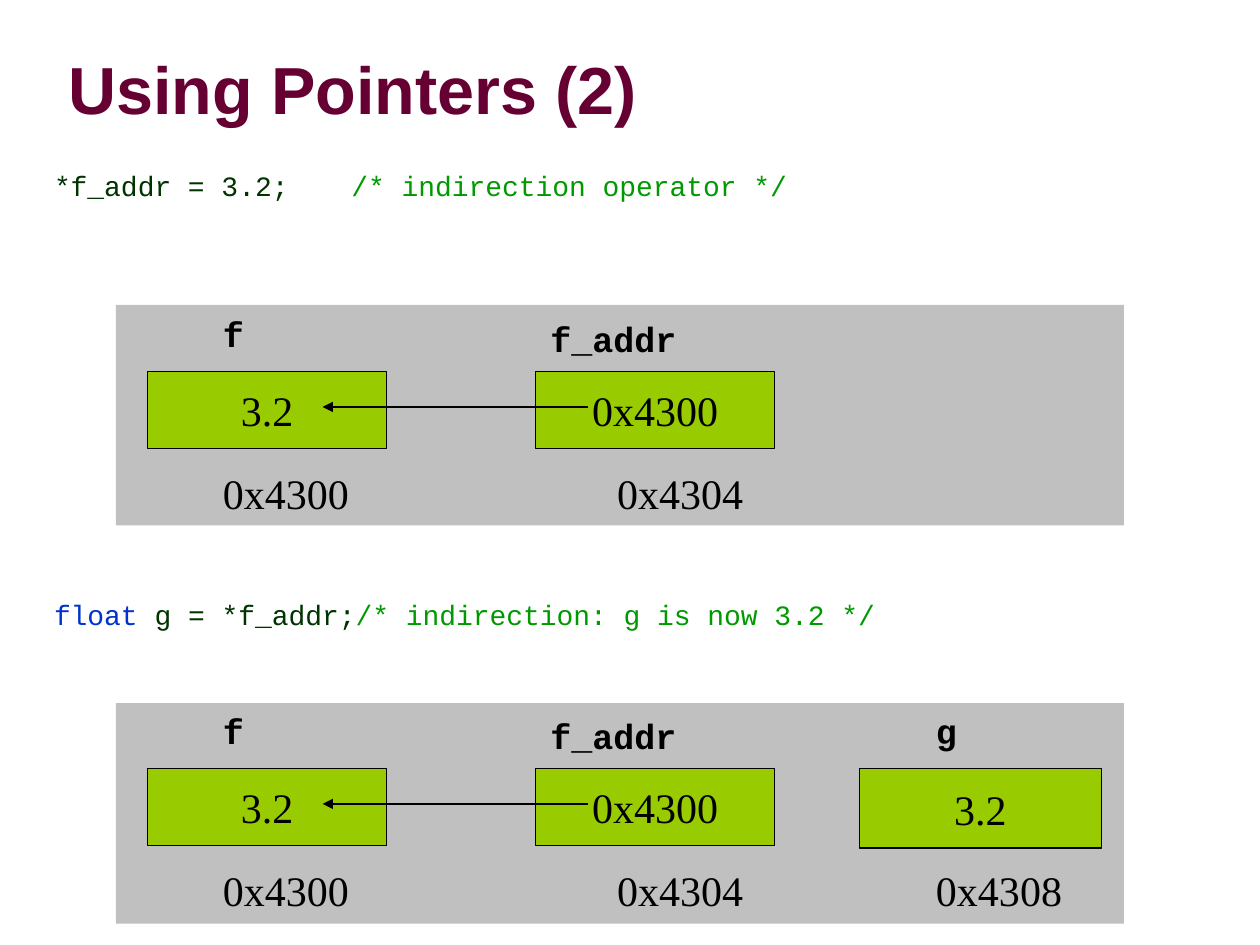
"""Build the slide "Using Pointers (2)" with two memory diagrams."""
from lxml import etree
from pptx import Presentation
from pptx.dml.color import RGBColor
from pptx.enum.shapes import MSO_CONNECTOR, MSO_SHAPE
from pptx.enum.text import MSO_ANCHOR, MSO_AUTO_SIZE, PP_ALIGN
from pptx.oxml.ns import qn
from pptx.util import Inches, Pt

RECTANGLE = MSO_SHAPE.RECTANGLE
STRAIGHT = MSO_CONNECTOR.STRAIGHT
MIDDLE, TOP = MSO_ANCHOR.MIDDLE, MSO_ANCHOR.TOP
GROW, FIXED = MSO_AUTO_SIZE.SHAPE_TO_FIT_TEXT, MSO_AUTO_SIZE.NONE
LEFT, CENTER = PP_ALIGN.LEFT, PP_ALIGN.CENTER

BLACK, GREY, LIME = "000000", "C0C0C0", "99CC00"
CODE, COMMENT, KEYWORD = "003300", "009900", "0033CC"
MONO, SERIF = "Courier New", "Times New Roman"

TITLE = "Using Pointers (2)"
CODE_LINES = [
    (5, [("*f_addr = 3.2;\t", CODE), ("/* indirection operator */", COMMENT)]),
    (229.5, [("float", KEYWORD), (" g = *f_addr;", CODE),
             ("/* indirection: g is now 3.2 */", COMMENT)]),
]
F = {"name": ("f", 1.67, 0, 0.36), "cell": ("3.2", 1.17, 1.9, 0.61),
     "address": ("0x4300", 1.67)}
F_ADDR = {"name": ("f_addr", 4.27, 0.04, 1.2), "cell": ("0x4300", 4.25, 1.9, 0.61),
          "address": ("0x4304", 4.8)}
G = {"name": ("g", 7.33, 0, 0.36), "cell": ("3.2", 6.82, 1.92, 0.63),
     "address": ("0x4308", 7.33)}
DIAGRAMS = [(2.42, 2.43, [F, F_ADDR]), (5.58, 5.58, [F, F_ADDR, G])]


def color(hex_text):
    return RGBColor.from_string(hex_text)


def add_span(para, text, font=SERIF, size=24, ink=BLACK, bold=False):
    span = para.add_run()
    span.text = text
    span.font.name, span.font.size, span.font.bold = font, Pt(size), bold
    span.font.color.rgb = color(ink)


def write(shape, text, align=LEFT, anchor=TOP, wrap=False, fit=GROW, **style):
    frame = shape.text_frame
    frame.word_wrap, frame.auto_size, frame.vertical_anchor = wrap, fit, anchor
    para = frame.paragraphs[0]
    para.alignment = align
    add_span(para, text, **style)


def add_label(page, text, left, top, width, height, **style):
    box = page.shapes.add_textbox(*map(Inches, (left, top, width, height)))
    write(box, text, **style)


def add_block(page, left, top, width, height, fill, outline=None):
    block = page.shapes.add_shape(RECTANGLE, *map(Inches, (left, top, width, height)))
    block.shadow.inherit = False
    block.fill.solid()
    block.fill.fore_color.rgb = color(fill)
    if outline:
        block.line.color.rgb = color(outline)
        block.line.width = Pt(0.75)
    else:
        block.line.fill.background()
    return block


def add_arrow(page, start, end, y):
    arrow = page.shapes.add_connector(STRAIGHT, *map(Inches, (start, y, end, y)))
    arrow.line.color.rgb = color(BLACK)
    arrow.line.width = Pt(0.75)
    etree.SubElement(arrow.line._get_or_add_ln(), qn("a:tailEnd"), type="triangle")
    etree.SubElement(arrow._element.spPr, qn("a:effectLst"))


def add_code(page):
    box = page.shapes.add_textbox(*map(Inches, (0.32, 1.34, 9.09, 5.72)))
    frame = box.text_frame
    frame.word_wrap = True
    for index, (gap, spans) in enumerate(CODE_LINES):
        para = frame.add_paragraph() if index else frame.paragraphs[0]
        para.line_spacing, para.space_before = 0.8, Pt(gap)
        indents = {"marL": 0.37, "indent": -0.36, "defTabSz": 1}
        for key, value in indents.items():
            para._p.get_or_add_pPr().set(key, str(Inches(value)))
        for text, ink in spans:
            add_span(para, text, font=MONO, size=16, ink=ink)


def add_diagram(page, panel_top, top, variables):
    add_block(page, 0.92, panel_top, 8, 1.75, GREY)
    for variable in variables:
        name, left, drop, width = variable["name"]
        add_label(page, name, left, top + drop, width, 0.43,
                  font=MONO, size=20, bold=True)
        address, left = variable["address"]
        add_label(page, address, left, top + 1.23, 1.21, 0.51)
        value, left, width, height = variable["cell"]
        cell = add_block(page, left, top + 0.52, width, height, LIME, BLACK)
        write(cell, value, align=CENTER, anchor=MIDDLE, fit=FIXED)
    add_arrow(page, 4.67, 2.56, top + 0.8)


def main():
    deck = Presentation()
    deck.slide_width, deck.slide_height = Inches(10), Inches(7.5)
    page = deck.slides.add_slide(deck.slide_layouts[5])
    title = page.shapes.title
    title.left, title.top, title.width, title.height = map(
        Inches, (0.44, 0.33, 9.53, 0.74))
    write(title, TITLE, anchor=MIDDLE, wrap=True, fit=FIXED,
          font="Arial", size=38, ink="660033", bold=True)
    add_code(page)
    for diagram in DIAGRAMS:
        add_diagram(page, *diagram)
    deck.save("out.pptx")


if __name__ == "__main__":
    main()
